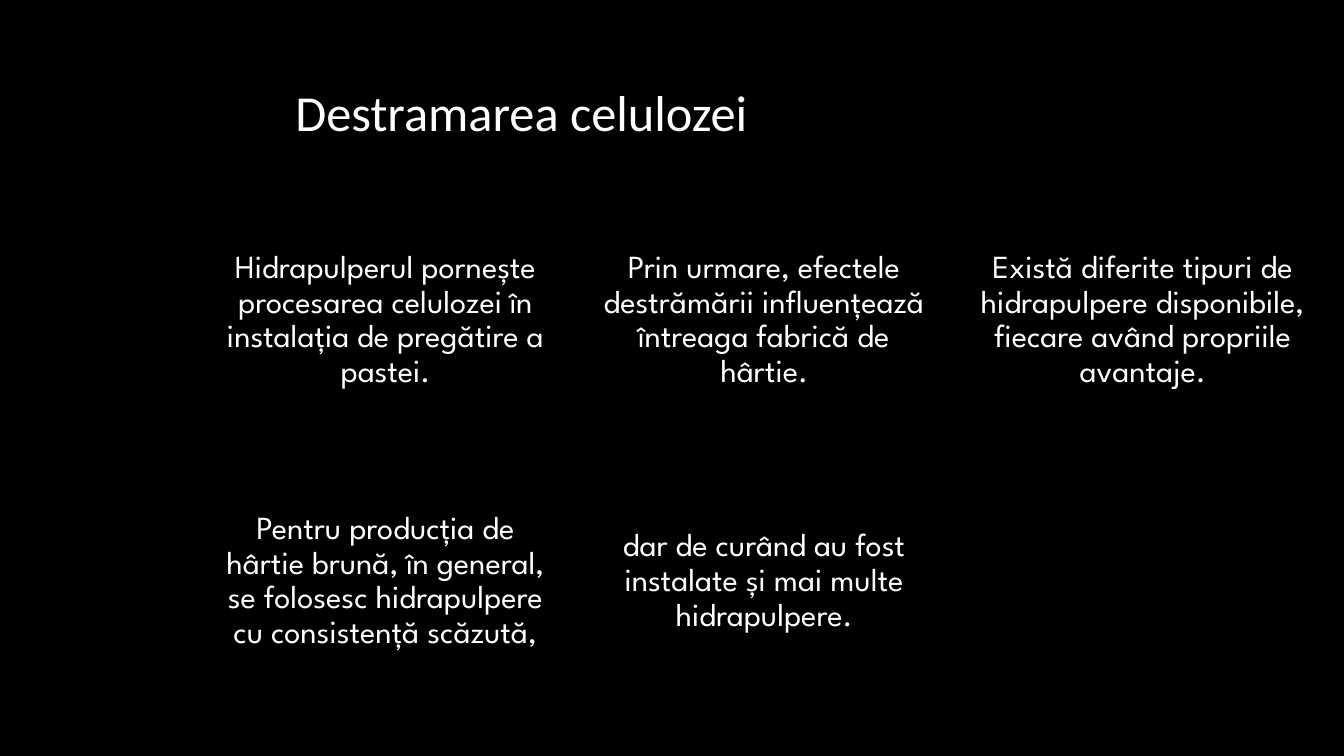
from dataclasses import dataclass

from lxml.etree import SubElement
from pptx import Presentation
from pptx.dml.color import RGBColor as Rgb
from pptx.enum.shapes import MSO_SHAPE as Kind
from pptx.enum.text import MSO_ANCHOR as Anchor, PP_ALIGN as Align
from pptx.oxml.ns import qn
from pptx.slide import Slide
from pptx.util import Inches, Pt


@dataclass(frozen=True)
class Theme:
    back: Rgb = Rgb(0, 0, 0)
    ink: Rgb = Rgb(255, 255, 255)
    alpha: int = 80000
    head: str = "Calibri"
    body: str = "League Spartan"
    big: int = 36
    small: int = 23


@dataclass(frozen=True)
class Grid:
    left: float = 2.08
    top: float = 2.13
    wide: float = 3.49
    high: float = 2.09
    col: float = 3.755
    row: float = 2.59

    def place(self, col: int, row: int) -> tuple[int, ...]:
        spot = (self.left + col * self.col, self.top + row * self.row)
        return tuple(Inches(n) for n in (*spot, self.wide, self.high))


@dataclass(frozen=True)
class Card:
    col: int
    row: int
    text: str


THEME = Theme()
GRID = Grid()
CARDS = [
    Card(0, 0, "Hidrapulperul pornește procesarea celulozei în instalația de pregătire a pastei."),
    Card(1, 0, "Prin urmare, efectele destrămării influențează întreaga fabrică de hârtie."),
    Card(2, 0, "Există diferite tipuri de hidrapulpere disponibile, fiecare având propriile avantaje."),
    Card(0, 1, "Pentru producția de hârtie brună, în general, se folosesc hidrapulpere cu consistență scăzută,"),
    Card(1, 1, "dar de curând au fost instalate și mai multe hidrapulpere."),
]


def style(para, face: str, size: int, align: Align) -> None:
    para.alignment = align
    para.font.name = face
    para.font.size = Pt(size)
    para.font.color.rgb = THEME.ink


def draw_title(slide: Slide, text: str) -> None:
    title = slide.shapes.title
    title.left, title.top = Inches(2.83), Inches(0.75)
    title.width, title.height = Inches(7.55), Inches(0.71)
    title.text_frame.text = text
    title.text_frame.vertical_anchor = Anchor.TOP
    style(title.text_frame.paragraphs[0], THEME.head, THEME.big, Align.LEFT)


def draw_card(slide: Slide, card: Card) -> None:
    box = slide.shapes.add_shape(Kind.RECTANGLE, *GRID.place(card.col, card.row))
    box.shadow.inherit = False
    box.line.fill.background()
    box.fill.solid()
    box.fill.fore_color.rgb = THEME.back
    tint = box.fill._xPr.find(".//" + qn("a:srgbClr"))
    SubElement(tint, qn("a:alpha"), val=str(THEME.alpha))

    frame = box.text_frame
    frame.word_wrap = True
    frame.vertical_anchor = Anchor.MIDDLE
    frame.margin_left = frame.margin_right = Inches(0.1)
    frame.margin_top = frame.margin_bottom = Inches(0.1)
    frame.text = card.text
    para = frame.paragraphs[0]
    para.line_spacing = 0.9
    para.space_after = Pt(8)
    style(para, THEME.body, THEME.small, Align.CENTER)


def main() -> None:
    deck = Presentation()
    deck.slide_width, deck.slide_height = Inches(13.33), Inches(7.5)
    slide = deck.slides.add_slide(deck.slide_layouts.get_by_name("Title Only"))
    slide.background.fill.solid()
    slide.background.fill.fore_color.rgb = THEME.back
    draw_title(slide, "Destramarea celulozei")
    for card in CARDS:
        draw_card(slide, card)
    deck.save("out.pptx")


if __name__ == "__main__":
    main()
